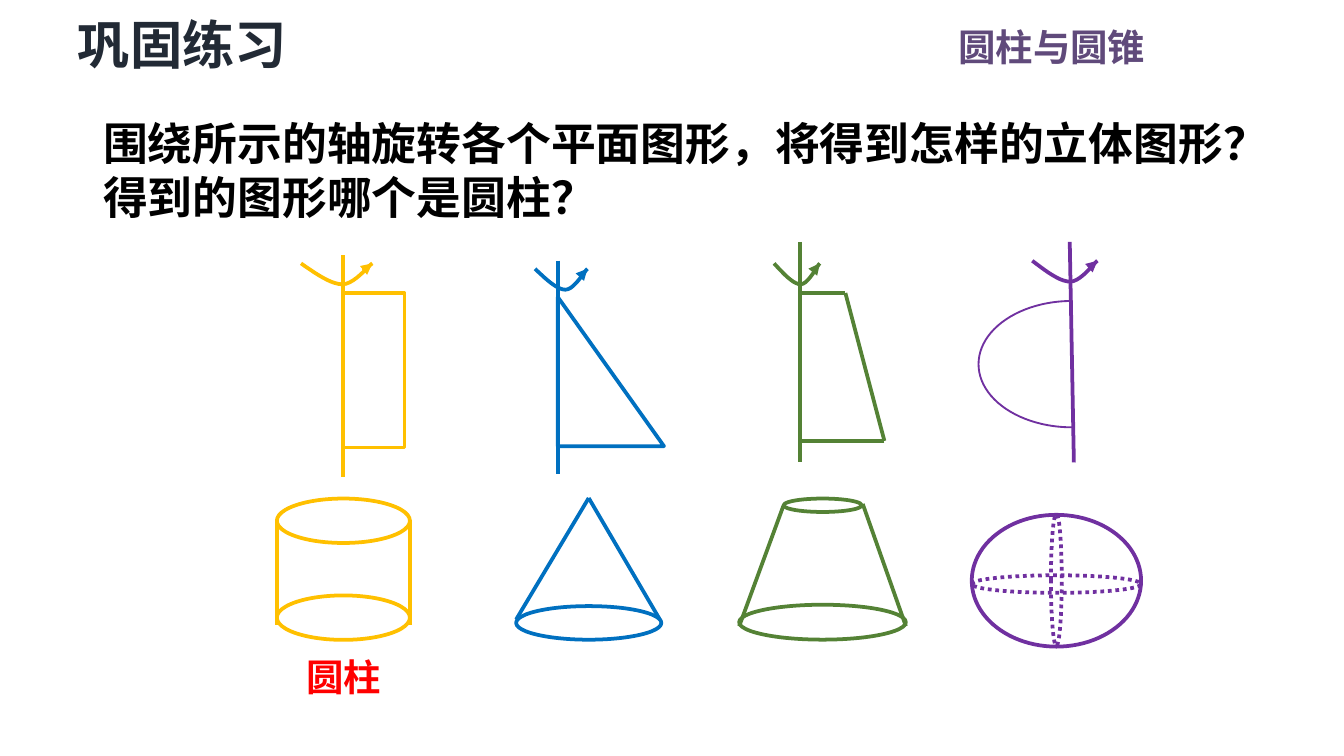
from lxml import etree
from pptx import Presentation
from pptx.dml.color import RGBColor
from pptx.enum.dml import MSO_LINE
from pptx.enum.shapes import MSO_CONNECTOR, MSO_SHAPE
from pptx.enum.text import MSO_ANCHOR, PP_ALIGN
from pptx.oxml.ns import qn
from pptx.util import Pt

FONT = "Noto Sans CJK SC"
YELLOW = RGBColor(0xFF, 0xC0, 0x00)
BLUE = RGBColor(0x00, 0x70, 0xC0)
GREEN = RGBColor(0x54, 0x82, 0x35)
PURPLE = RGBColor(0x70, 0x30, 0xA0)
BLACK = RGBColor(0x00, 0x00, 0x00)
RED = RGBColor(0xFF, 0x00, 0x00)
NAVY = RGBColor(0x22, 0x2A, 0x35)
PLUM = RGBColor(0x60, 0x4A, 0x7B)
LEFT, RIGHT = PP_ALIGN.LEFT, PP_ALIGN.RIGHT
TOP = MSO_ANCHOR.TOP
STRAIGHT = MSO_CONNECTOR.STRAIGHT
SOLID, DOTTED = MSO_LINE.SOLID, MSO_LINE.ROUND_DOT
RECTANGLE, TRIANGLE = MSO_SHAPE.RECTANGLE, MSO_SHAPE.RIGHT_TRIANGLE
ELLIPSE, PIE = MSO_SHAPE.OVAL, MSO_SHAPE.PIE


def write_text(shape, box, text, size, color, align=LEFT):
    """Place a text shape and fill it with one bold run."""
    shape.left, shape.top, shape.width, shape.height = [Pt(v) for v in box]
    frame = shape.text_frame
    frame.word_wrap = True
    frame.vertical_anchor = TOP
    paragraph = frame.paragraphs[0]
    paragraph.alignment = align
    paragraph.line_spacing = Pt(round(size * 1.2))
    run = paragraph.add_run()
    run.text = text
    run.font.name = FONT
    run.font.size = Pt(size)
    run.font.bold = True
    run.font.color.rgb = color
    east_asian = etree.SubElement(run._r.get_or_add_rPr(), qn("a:ea"))
    east_asian.set("typeface", FONT)


def add_line(x1, y1, x2, y2, color):
    """Draw a straight line without a shadow."""
    line = slide.shapes.add_connector(STRAIGHT, Pt(x1), Pt(y1), Pt(x2), Pt(y2))
    line.line.color.rgb = color
    line.line.width = Pt(2)
    etree.SubElement(line._element.spPr, qn("a:effectLst"))
    return line


presentation = Presentation()
presentation.slide_width = Pt(720)
presentation.slide_height = Pt(405)
slide = presentation.slides.add_slide(presentation.slide_layouts[5])

# Title, chapter name, question and answer label
title = slide.shapes.title
write_text(title, (36.7, 3, 145.4, 39.6), "巩固练习", 28, NAVY)
title.text_frame.margin_left = title.text_frame.margin_right = Pt(5)
title.text_frame.margin_top = title.text_frame.margin_bottom = Pt(3)

for box, text, size, color, align in [
    ((496.1, 9.2, 124.6, 31.7), "圆柱与圆锥", 20, PLUM, RIGHT),
    ((48.2, 58, 629.3, 65.5),
     "围绕所示的轴旋转各个平面图形，将得到怎样的立体图形？得到的图形哪个是圆柱？",
     24, BLACK, LEFT),
    ((157, 347, 105.8, 31.7), "圆柱", 20, RED, LEFT),
]:
    textbox = slide.shapes.add_textbox(0, 0, 0, 0)
    write_text(textbox, box, text, size, color, align)

# Outlined plane figures, and the ellipses of the solids
for kind, x, y, width, height, color, weight, dash in [
    (RECTANGLE, 183.6, 157, 33.1, 82.8, YELLOW, 2, SOLID),
    (TRIANGLE, 298.8, 159.1, 56.9, 79.9, BLUE, 2, SOLID),
    (PIE, 524.2, 161.3, 100.1, 67.7, PURPLE, 1, SOLID),
    (ELLIPSE, 148.3, 267.1, 71.3, 23.8, YELLOW, 2, SOLID),
    (ELLIPSE, 148.3, 319, 71.3, 23.8, YELLOW, 2, SOLID),
    (ELLIPSE, 276.5, 324.7, 77.8, 18, BLUE, 2, SOLID),
    (ELLIPSE, 419.8, 267.1, 41.8, 7.2, GREEN, 2, SOLID),
    (ELLIPSE, 396, 324, 89.3, 18.7, GREEN, 2, SOLID),
    (ELLIPSE, 520.6, 275.8, 90.7, 70.6, PURPLE, 2, SOLID),
    (ELLIPSE, 520.6, 308.2, 90.7, 9.4, PURPLE, 2, DOTTED),
    (ELLIPSE, 563, 275.4, 5.8, 70.6, PURPLE, 2, DOTTED),
]:
    shape = slide.shapes.add_shape(kind, Pt(x), Pt(y), Pt(width), Pt(height))
    shape.shadow.inherit = False
    shape.fill.background()
    shape.line.color.rgb = color
    shape.line.width = Pt(weight)
    shape.line.dash_style = dash
    if kind == PIE:
        # Left half, in units of 100000 / 60000 degrees
        shape.adjustments[0] = 53.34
        shape.adjustments[1] = 162

# Rotation axes
for x1, y1, x2, y2, color in [
    (183.6, 136.8, 183.6, 255.6, YELLOW),
    (298.8, 139.7, 298.8, 254.2, BLUE),
    (428.4, 129.6, 428.4, 247.7, GREEN),
    (573.1, 129.6, 575.3, 247.7, PURPLE),
]:
    add_line(x1, y1, x2, y2, color)

# Open sides of the trapezoid
trapezoid = [(428.4, 157), (452.9, 157), (473.8, 236.2), (428.4, 236.2)]
for start, end in zip(trapezoid, trapezoid[1:]):
    add_line(*start, *end, GREEN)

# Sides of the cylinder, cone and frustum
for x1, y1, x2, y2, color in [
    (148.3, 278.6, 148.3, 334.8, YELLOW),
    (219.6, 278.6, 219.6, 334.8, YELLOW),
    (276.5, 331.9, 315.4, 266.8, BLUE),
    (315.4, 266.8, 353.5, 331.9, BLUE),
    (419.8, 270.7, 396, 335.5, GREEN),
    (462.2, 270, 485.3, 335.5, GREEN),
]:
    add_line(x1, y1, x2, y2, color)

# Rotation arrows: two Bezier arcs in a unit box, then a short arrowhead line
ARCS = [
    [(0, 0), (0.21, 0.5), (0.42, 1), (0.58, 1)],
    [(0.58, 1), (0.75, 1), (0.94, 0.12), (1, 0)],
]
STEPS = 10
ARROW_HEIGHT = 11.2
swing = [(0, 0)]
for arc in ARCS:
    for step in range(1, STEPS + 1):
        t = step / STEPS
        weights = [(1 - t) ** 3, 3 * t * (1 - t) ** 2, 3 * t * t * (1 - t), t ** 3]
        swing.append(tuple(sum(w * point[axis] for w, point in zip(weights, arc))
                           for axis in (0, 1)))

for x, y, width, color in [
    (161.3, 141.1, 38.2, YELLOW),
    (286.6, 144, 28.1, BLUE),
    (414.7, 141.1, 24.5, GREEN),
    (553, 139.7, 34.9, PURPLE),
]:
    points = [(Pt(x + u * width), Pt(y + v * ARROW_HEIGHT)) for u, v in swing]
    builder = slide.shapes.build_freeform(*points[0])
    builder.add_line_segments(points[1:], close=False)
    curve = builder.convert_to_shape()
    curve.shadow.inherit = False
    curve.fill.background()
    curve.line.color.rgb = color
    curve.line.width = Pt(2)
    tip = add_line(x + 0.87 * width, y + 4, x + width, y, color)
    etree.SubElement(tip.line._get_or_add_ln(), qn("a:tailEnd")).set("type", "triangle")

presentation.save("out.pptx")
